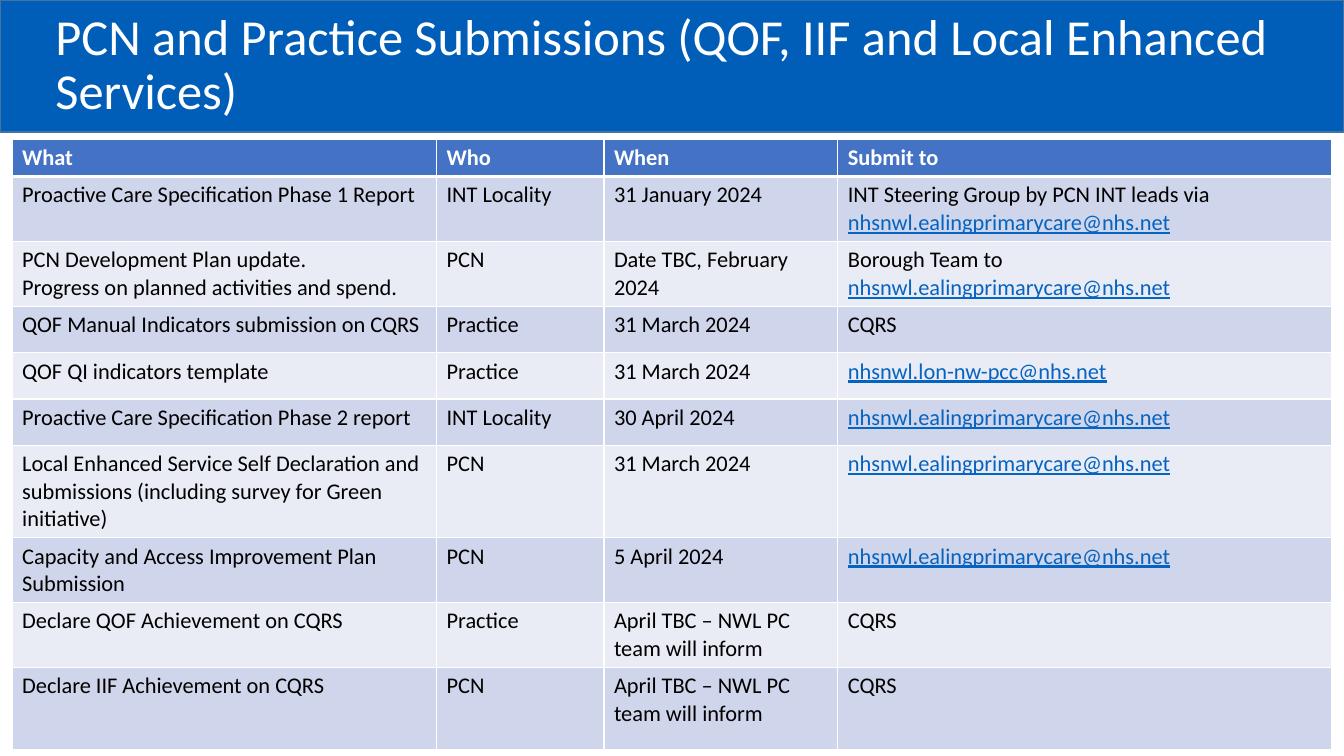
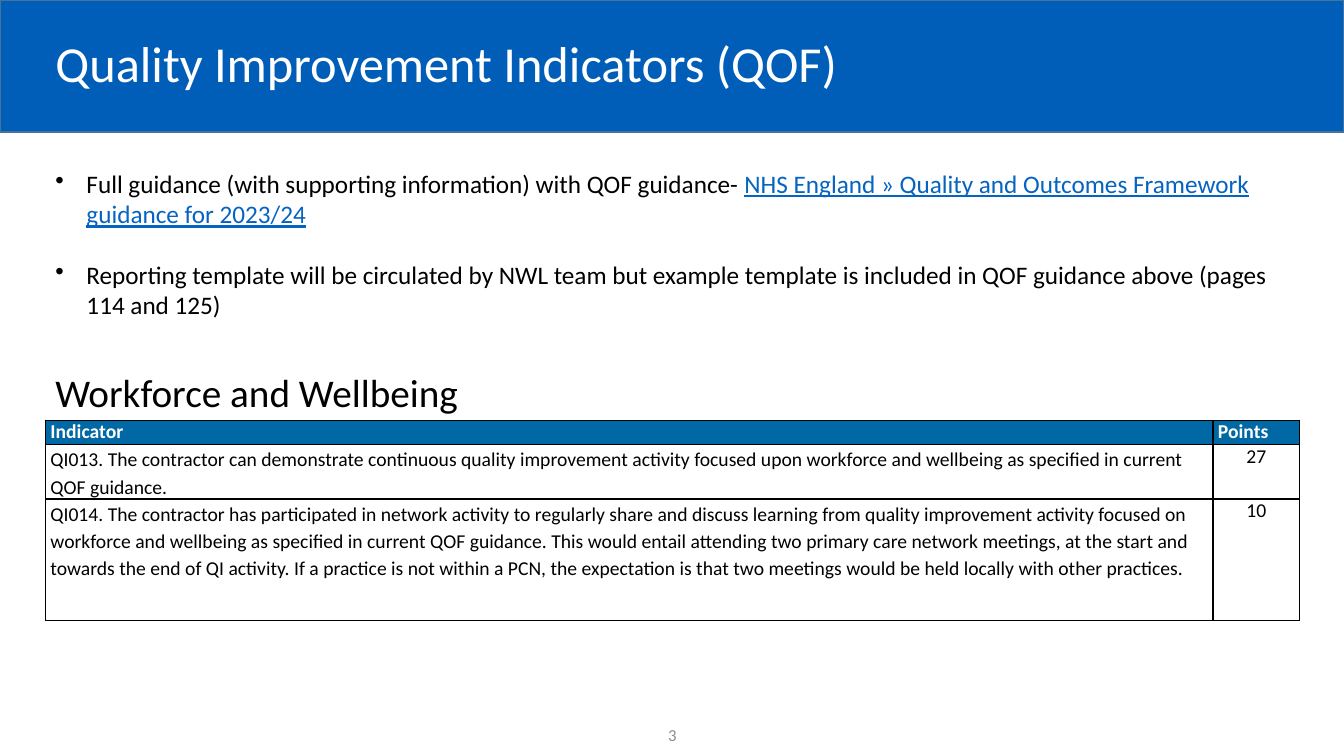
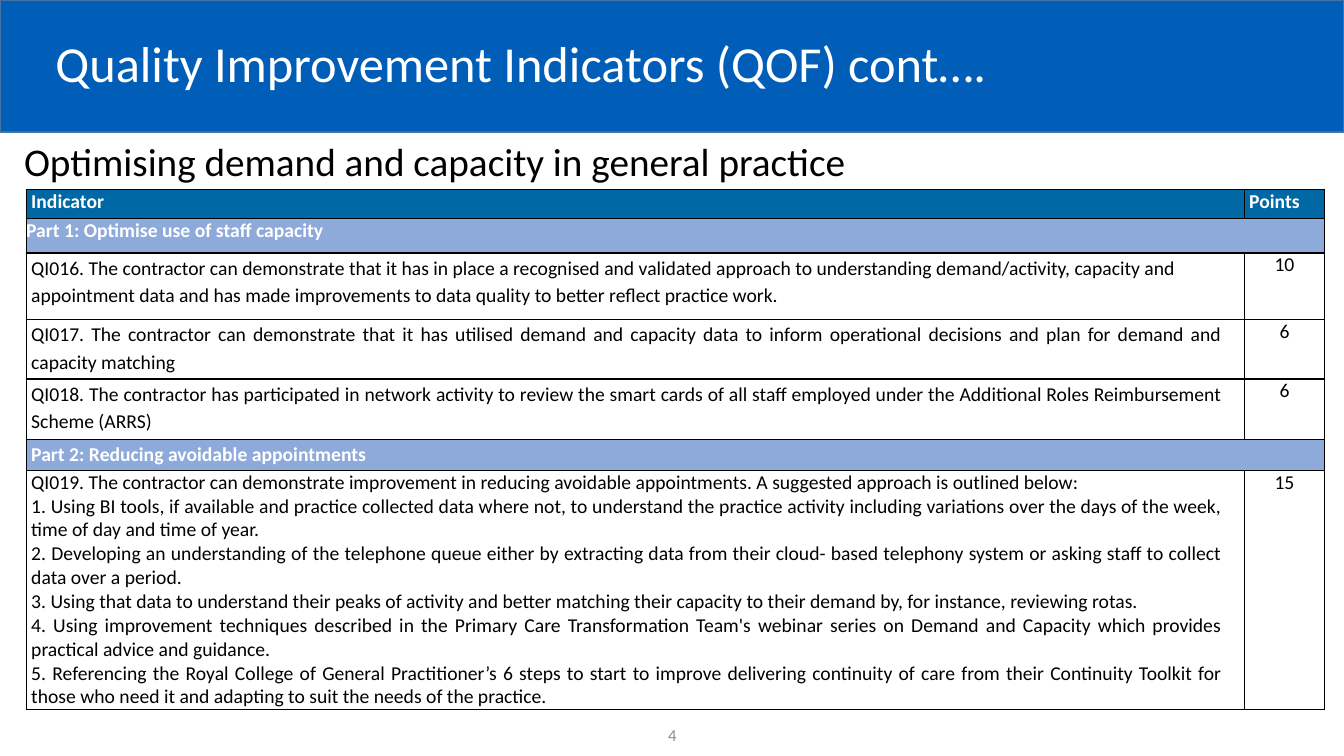
from pptx import Presentation
from pptx.dml.color import RGBColor
from pptx.enum.shapes import MSO_SHAPE
from pptx.enum.text import MSO_ANCHOR, MSO_AUTO_SIZE, PP_ALIGN
from pptx.oxml.ns import qn
from pptx.util import Emu, Pt
from lxml.etree import SubElement

WIDE, HIGH = 1333, 750
BLUE, TEAL, LILAC, LINK = "005EB8", "0068A4", "8EAADB", "0563C1"
WHITE, BLACK, GREY = "FFFFFF", "000000", "8C8C8C"
BODY = (45, 1244)  # left and width shared by titles and text
LEFT, MID, JUST = PP_ALIGN.LEFT, PP_ALIGN.CENTER, PP_ALIGN.JUSTIFY
CARE = "|nhsnwl.ealingprimarycare@nhs.net|"

DATES = [
    ("What", "Who", "When", "Submit to"),
    ("Proactive Care Specification Phase 1 Report", "INT Locality", "31 January 2024",
     "INT Steering Group by PCN INT leads via " + CARE),
    ("PCN Development Plan update.\nProgress on planned activities and spend.", "PCN",
     "Date TBC, February 2024", "Borough Team to " + CARE),
    ("QOF Manual Indicators submission on CQRS", "Practice", "31 March 2024", "CQRS"),
    ("QOF QI indicators template", "Practice", "31 March 2024",
     "|nhsnwl.lon-nw-pcc@nhs.net|"),
    ("Proactive Care Specification Phase 2 report", "INT Locality", "30 April 2024", CARE),
    ("Local Enhanced Service Self Declaration and submissions "
     "(including survey for Green initiative)", "PCN", "31 March 2024", CARE),
    ("Capacity and Access Improvement Plan Submission", "PCN", "5 April 2024", CARE),
    ("Declare QOF Achievement on CQRS", "Practice",
     "April TBC – NWL PC team will inform", "CQRS"),
    ("Declare IIF Achievement on CQRS", "PCN",
     "April TBC – NWL PC team will inform", "CQRS"),
]

# Indicator rows: height, text, points, paragraph format; no points means a part row
LOOSE = {"line_spacing": 1.15}
WORK = [
    (54, "QI013. The contractor can demonstrate continuous quality improvement activity "
         "focused upon workforce and wellbeing as specified in current QOF guidance.",
     "27", LOOSE),
    (121, "QI014. The contractor has participated in network activity to regularly share "
          "and discuss learning from quality improvement activity focused on workforce and "
          "wellbeing as specified in current QOF guidance. This would entail attending two "
          "primary care network meetings, at the start and towards the end of QI activity. "
          "If a practice is not within a PCN, the expectation is that two meetings would be "
          "held locally with other practices.", "10", LOOSE),
]
STEPS = (
    "QI019. The contractor can demonstrate improvement in reducing avoidable "
    "appointments. A suggested approach is outlined below:",
    "1. Using BI tools, if available and practice collected data where not, to "
    "understand the practice activity including variations over the days of the "
    "week, time of day and time of year.",
    "2. Developing an understanding of the telephone queue either by extracting data "
    "from their cloud- based telephony system or asking staff to collect data over a "
    "period.",
    "3. Using that data to understand their peaks of activity and better matching "
    "their capacity to their demand by, for instance, reviewing rotas.",
    "4. Using improvement techniques described in the Primary Care Transformation "
    "Team's webinar series on Demand and Capacity which provides practical advice "
    "and guidance.",
    "5. Referencing the Royal College of General Practitioner’s 6 steps to start to "
    "improve delivering continuity of care from their Continuity Toolkit for those "
    "who need it and adapting to suit the needs of the practice.",
)
DEMAND = [
    (34, "Part 1: Optimise use of staff capacity", "", {}),
    (66, "QI016. The contractor can demonstrate that it has in place a recognised and "
         "validated approach to understanding demand/activity, capacity and appointment "
         "data and has made improvements to data quality to better reflect practice work.",
     "10", LOOSE),
    (59, "QI017. The contractor can demonstrate that it has utilised demand and capacity "
         "data to inform operational decisions and plan for demand and capacity matching",
     "6", {**LOOSE, "alignment": JUST}),
    (60, "QI018. The contractor has participated in network activity to review the smart "
         "cards of all staff employed under the Additional Roles Reimbursement Scheme "
         "(ARRS)", "6", {**LOOSE, "alignment": JUST}),
    (31, "Part 2: Reducing avoidable appointments", "", LOOSE),
    (237, "\n".join(STEPS), "15", {"alignment": JUST}),
]


def px(num):
    return Emu(num * 9144)


def tint(code):
    return RGBColor.from_string(code)


def style(item, vals):
    for name, val in vals.items():
        setattr(item, name, val)


def place(item, box):
    style(item, dict(zip(("left", "top", "width", "height"), map(px, box))))


def paint(fill, code):
    fill.solid()
    fill.fore_color.rgb = tint(code)


def write(frame, text, size, code=BLACK, bold=False, para={}, dot=False):
    """Newlines part paragraphs; text between bars looks like a link."""
    for num, line in enumerate(text.split("\n")):
        par = frame.add_paragraph() if num else frame.paragraphs[0]
        style(par, {"alignment": LEFT, **para})
        if dot:
            props = par._p.get_or_add_pPr()
            props.set("marL", str(px(31)))
            props.set("indent", str(px(-31)))
            SubElement(props, qn("a:buChar")).set("char", "•")
            par.space_before = Pt(22 if num else 0)
        for odd, part in enumerate(line.split("|")):
            if part:
                run = par.add_run()
                run.text = part
                link = odd % 2 == 1
                style(run.font, {"name": "Calibri", "size": Pt(size), "bold": bold,
                                 "underline": link})
                run.font.color.rgb = tint(LINK if link else code)


def note(slide, box, text, size, wrap=True, **look):
    shape = slide.shapes.add_textbox(*map(px, box))
    shape.text_frame.word_wrap = wrap
    write(shape.text_frame, text, size, **look)
    return shape


def edge(cell, code, top=1, base=1):
    props = cell._tc.get_or_add_tcPr()
    for side, wide in zip("LRTB", (1, 1, top, base)):
        line = SubElement(props, qn("a:ln" + side), w=str(Pt(wide)))
        SubElement(SubElement(line, qn("a:solidFill")), qn("a:srgbClr"), val=code)


def grid(slide, left, top, cols, rows):
    box = left, top, sum(cols), sum(rows)
    table = slide.shapes.add_table(len(rows), len(cols), *map(px, box)).table
    style(table, {"first_row": False, "horz_banding": False})
    for col, wide in zip(table.columns, cols):
        col.width = px(wide)
    for row, high in zip(table.rows, rows):
        row.height = px(high)
    return table


# Shared band, kept in the layout
def band(slide):
    shape = slide.shapes.add_shape(MSO_SHAPE.RECTANGLE, *map(px, (0, 0, WIDE, 131)))
    shape.shadow.inherit = False
    paint(shape.fill, BLUE)
    shape.line.color.rgb = tint("43739E")
    shape.line.width = Pt(1)
    slide.slide_layout.shapes.element.insert(2, shape.element)


# Title and page number
def head(deck, text, page=""):
    slide = deck.slides.add_slide(deck.slide_layouts[5])
    title = slide.shapes.title
    place(title, (BODY[0], 36, BODY[1], 59))
    style(title.text_frame, {"word_wrap": True, "auto_size": MSO_AUTO_SIZE.NONE,
                             "vertical_anchor": MSO_ANCHOR.MIDDLE})
    write(title.text_frame, text, 36, WHITE, para={"line_spacing": 0.9})
    if page:
        foot = note(slide, (517, 709, 300, 40), page, 12, code=GREY,
                    para={"alignment": MID})
        foot.text_frame.vertical_anchor = MSO_ANCHOR.MIDDLE
    return slide


# Table of submission dates
def dates(slide, left, top):
    rows = (36, 62, 62, 46, 46, 46, 88, 62, 62, 81)
    table = grid(slide, left, top, (421, 166, 232, 490), rows)
    for num, line in enumerate(DATES):
        for col, text in enumerate(line):
            cell = table.cell(num, col)
            edge(cell, WHITE, 3 if num == 1 else 1, 1 if num else 3)
            paint(cell.fill, ("E9EBF5", "CFD5EA")[num % 2] if num else "4472C4")
            write(cell.text_frame, text, 16, BLACK if num else WHITE, not num)


# Table of indicators and points
def points(slide, left, top, cols, first, lines, gap=0):
    rows = [(first, "Indicator", "Points", {}), *lines]
    table = grid(slide, left, top, cols, [row[0] for row in rows])
    for num, (_, text, score, para) in enumerate(rows):
        pair = table.cell(num, 0), table.cell(num, 1)
        fill = WHITE if num and score else LILAC if num else TEAL
        dark = fill != WHITE
        for cell in pair:
            edge(cell, BLACK)
            paint(cell.fill, fill)
            style(cell, dict.fromkeys(
                ("margin_left", "margin_right", "margin_top", "margin_bottom"), 0))
        if not score:
            pair[0].merge(pair[1])
        if para or not num:
            pair[0].margin_left = px(5)
        if not dark:
            pair[0].margin_right = px(gap)
        code = WHITE if dark else BLACK
        write(pair[0].text_frame, text, 14, code, dark, para)
        if score:
            pair[1].margin_left = px(0 if num else 5)
            write(pair[1].text_frame, score, 14, code, dark,
                  {"alignment": MID if num else LEFT})


def main():
    deck = Presentation()
    style(deck, {"slide_width": px(WIDE), "slide_height": px(HIGH)})

    # Submissions
    slide = head(deck, "PCN and Practice Submissions (QOF, IIF and Local Enhanced Services)")
    band(slide)
    dates(slide, 12, 138)

    # Workforce indicators
    slide = head(deck, "Quality Improvement Indicators (QOF)", "3")
    note(slide, (BODY[0], 162, BODY[1], 162),
         "Full guidance (with supporting information) with QOF guidance- "
         "|NHS England » Quality and Outcomes Framework guidance for 2023/24|\n"
         "Reporting template will be circulated by NWL team but example template is "
         "included in QOF guidance above (pages 114 and 125)", 18, dot=True)
    note(slide, (BODY[0], 360, 424, 57), "Workforce and Wellbeing", 28, wrap=False)
    points(slide, BODY[0], 417, (1158, 86), 24, WORK)

    # Demand indicators
    slide = head(deck, "Quality Improvement Indicators (QOF) cont….", "4")
    points(slide, 26, 188, (1208, 80), 29, DEMAND, 21)
    note(slide, (14, 131, 844, 57),
         "Optimising demand and capacity in general practice", 28, wrap=False)

    deck.save("out.pptx")


if __name__ == "__main__":
    main()
